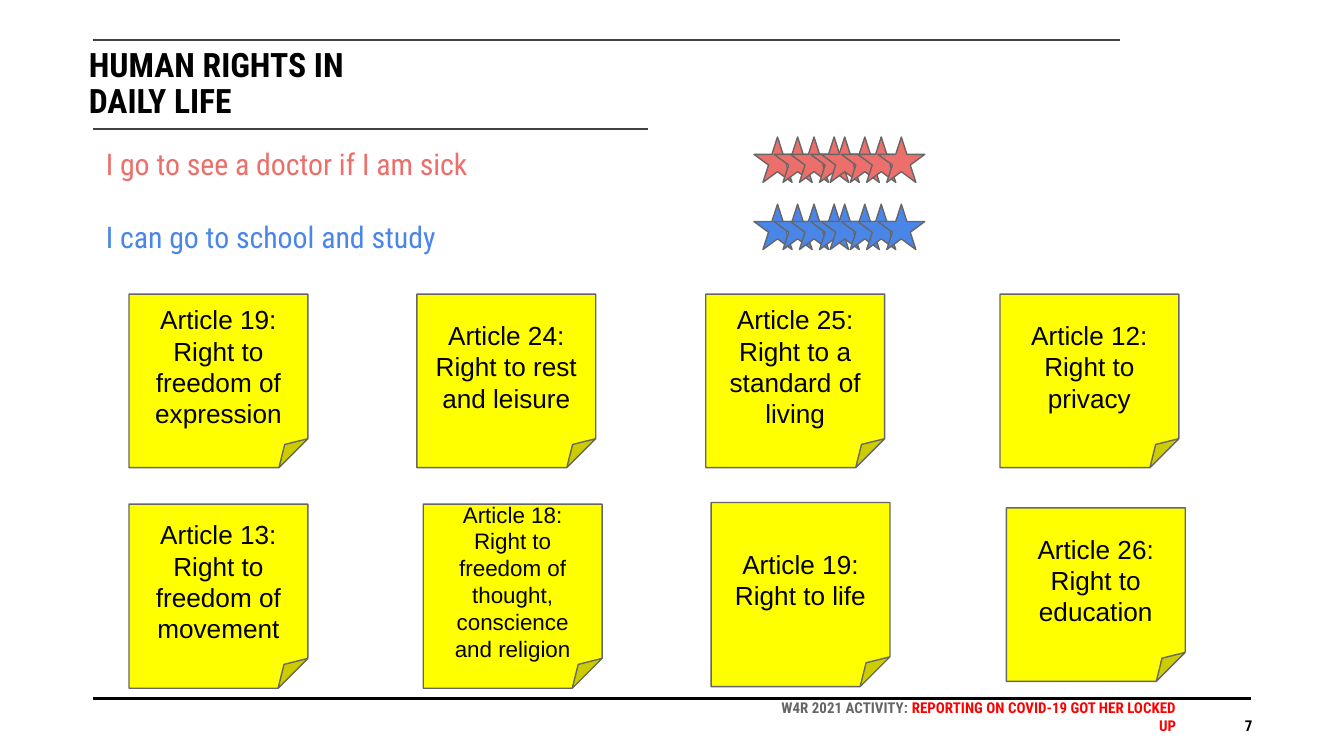
from dataclasses import dataclass
from itertools import product

from lxml.etree import SubElement
from pptx import Presentation
from pptx.dml.color import RGBColor
from pptx.enum.shapes import MSO_CONNECTOR, MSO_SHAPE
from pptx.enum.text import MSO_ANCHOR, PP_ALIGN
from pptx.oxml.ns import qn
from pptx.util import Cm, Pt

HEADING_FONT = "Roboto Condensed"
BLACK, DARK_GRAY, GRAY = "000000", "424242", "666666"
CORAL, BLUE, YELLOW, RED = "EC6F6B", "4A86E8", "FFFF00", "FF0000"


@dataclass
class Rule:
    left: float
    right: float
    top: float
    color: str
    weight: float


@dataclass
class Note:
    text: str
    left: float
    top: float
    height: float
    size: int = 14


@dataclass
class StarRow:
    top: float
    color: str


RULES = [
    Rule(1.75, 23.65, 13.21, BLACK, 1.5),
    Rule(1.75, 21.16, 0.76, DARK_GRAY, 1),
    Rule(1.75, 12.24, 2.44, DARK_GRAY, 1),
]
NOTES = [
    Note("Article 19: Right to freedom of expression", 2.44, 5.56, 3.28),
    Note("Article 24: Right to rest and leisure", 7.88, 5.56, 3.28),
    Note("Article 25: Right to a standard of living", 13.34, 5.56, 3.28),
    Note("Article 12: Right to privacy", 18.9, 5.56, 3.28),
    Note("Article 13: Right to freedom of movement", 2.44, 9.53, 3.48),
    Note("Article 18: Right to freedom of thought, conscience and religion",
         8, 9.53, 3.48, 12),
    Note("Article 19: Right to life", 13.44, 9.5, 3.48),
    Note("Article 26: Right to education", 19.02, 9.6, 3.28),
]
STAR_ROWS = [StarRow(2.59, CORAL), StarRow(3.86, BLUE)]
STAR_GROUPS = [14.25, 15.52]
STAR_OFFSETS = [0, 0.38, 0.69, 1.07]


def rgb(color: str) -> RGBColor:
    return RGBColor.from_string(color)


def format_run(run, size: int, color: str, font: str = HEADING_FONT,
               bold: bool = False) -> None:
    run.font.name = font
    run.font.size = Pt(size)
    run.font.bold = bold
    run.font.color.rgb = rgb(color)


def set_frame(text_frame, side: float, vertical: float, anchor) -> None:
    text_frame.word_wrap = True
    text_frame.margin_left = text_frame.margin_right = Cm(side)
    text_frame.margin_top = text_frame.margin_bottom = Cm(vertical)
    text_frame.vertical_anchor = anchor


def add_text(slide, left: float, top: float, width: float, height: float,
             side: float = 0, vertical: float = 0, anchor=MSO_ANCHOR.TOP):
    box = slide.shapes.add_textbox(Cm(left), Cm(top), Cm(width), Cm(height))
    set_frame(box.text_frame, side, vertical, anchor)
    return box.text_frame


def add_rule(slide, rule: Rule) -> None:
    line = slide.shapes.add_connector(
        MSO_CONNECTOR.STRAIGHT,
        Cm(rule.left), Cm(rule.top), Cm(rule.right), Cm(rule.top))
    line.line.color.rgb = rgb(rule.color)
    line.line.width = Pt(rule.weight)
    SubElement(line._element.spPr, qn("a:effectLst"))


def add_outlined(slide, kind, left: float, top: float, width: float,
                 height: float, color: str):
    shape = slide.shapes.add_shape(
        kind, Cm(left), Cm(top), Cm(width), Cm(height))
    shape.shadow.inherit = False
    shape.fill.solid()
    shape.fill.fore_color.rgb = rgb(color)
    shape.line.color.rgb = rgb(GRAY)
    shape.line.width = Pt(0.75)
    return shape


def add_note(slide, note: Note) -> None:
    shape = add_outlined(slide, MSO_SHAPE.FOLDED_CORNER, note.left, note.top,
                         3.38, note.height, YELLOW)
    set_frame(shape.text_frame, 0.25, 0.25, MSO_ANCHOR.MIDDLE)
    shape.text_frame.text = note.text
    paragraph = shape.text_frame.paragraphs[0]
    paragraph.alignment = PP_ALIGN.CENTER
    format_run(paragraph.runs[0], note.size, BLACK, "Arial")


def add_star_row(slide, row: StarRow) -> None:
    for group, offset in product(STAR_GROUPS, STAR_OFFSETS):
        add_outlined(slide, MSO_SHAPE.STAR_5_POINT, group + offset, row.top,
                     0.89, 0.86, row.color)


def main() -> None:
    presentation = Presentation()
    presentation.slide_width, presentation.slide_height = Cm(25.4), Cm(14.29)
    slide = presentation.slides.add_slide(presentation.slide_layouts[6])

    # Rules
    for rule in RULES:
        add_rule(slide, rule)

    # Title
    title = add_text(slide, 1.5, 0.91, 8.61, 1.32, side=0.18)
    title.text = "HUMAN RIGHTS IN\vDAILY LIFE"
    title.paragraphs[0].line_spacing = 0.9
    for run in title.paragraphs[0].runs:
        format_run(run, 18, BLACK, bold=True)

    # Sticky notes
    for note in NOTES:
        add_note(slide, note)

    # Statements and their stars
    statements = add_text(slide, 1.75, 2.51, 12.78, 4.52, 0.25, 0.25)
    statements.text = ("I go to see a doctor if I am sick\n"
                       "I can go to school and study")
    for paragraph, row in zip(statements.paragraphs, STAR_ROWS):
        format_run(paragraph.runs[0], 16, row.color)
        add_star_row(slide, row)
    statements.paragraphs[1].space_before = Pt(20)

    # Footer and page number
    footer = add_text(slide, 14.53, 13.46, 7.7, 0.43, anchor=MSO_ANCHOR.BOTTOM)
    number = add_text(slide, 22.4, 13.61, 1.27, 0.28, anchor=MSO_ANCHOR.BOTTOM)
    footer.text = "W4R 2021 ACTIVITY: "
    number.text = "7"
    activity = footer.paragraphs[0].add_run()
    activity.text = "REPORTING ON COVID-19 GOT HER LOCKED UP"
    format_run(footer.paragraphs[0].runs[0], 8, GRAY, bold=True)
    format_run(activity, 8, RED, bold=True)
    format_run(number.paragraphs[0].runs[0], 8, BLACK, bold=True)
    for text_frame in (footer, number):
        text_frame.paragraphs[0].alignment = PP_ALIGN.RIGHT

    presentation.save("out.pptx")


if __name__ == "__main__":
    main()
